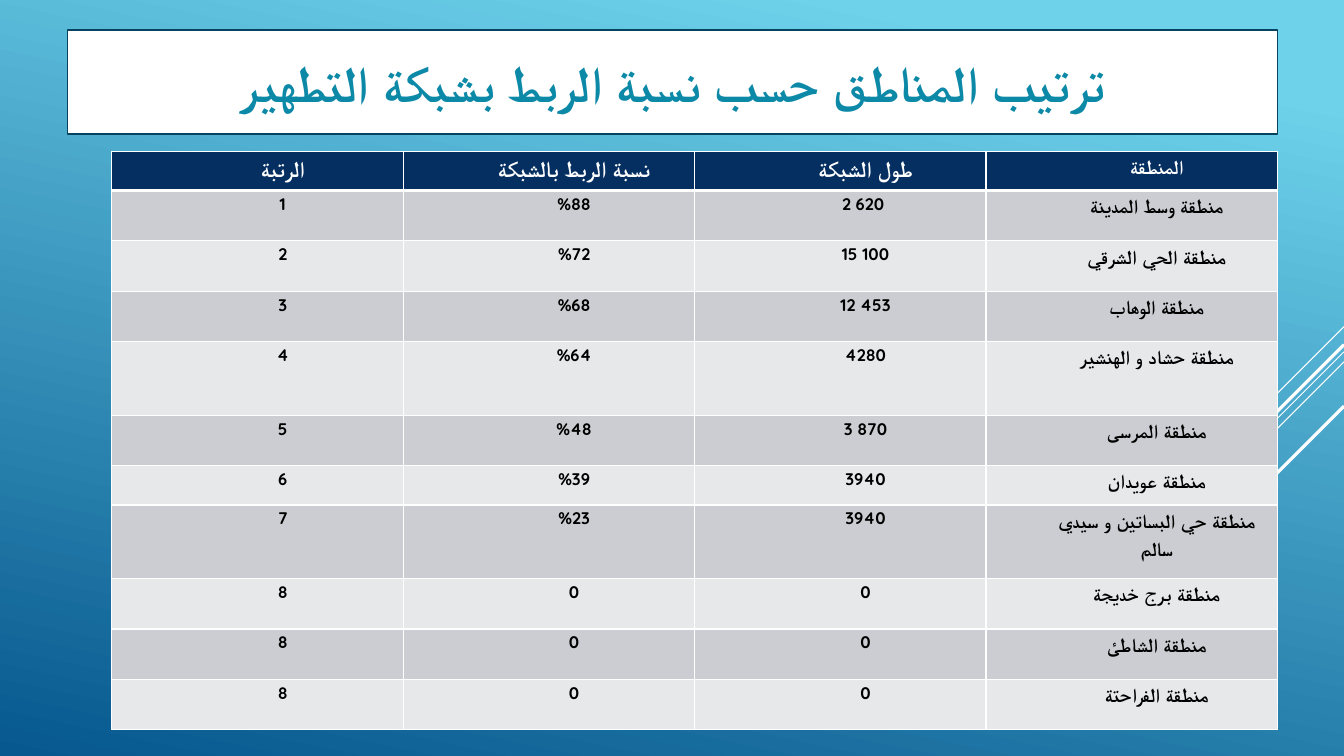
from lxml.etree import SubElement
from pptx import Presentation
from pptx.dml.color import RGBColor
from pptx.enum.shapes import MSO_CONNECTOR as CONNECTOR
from pptx.enum.text import MSO_ANCHOR as ANCHOR, MSO_AUTO_SIZE as AUTO_SIZE, PP_ALIGN as ALIGN
from pptx.oxml import parse_xml
from pptx.oxml.ns import nsdecls, qn
from pptx.util import Inches, Pt

TITLE = "ترتيب المناطق حسب نسبة الربط بشبكة التطهير"
HEADER = ("الرتبة", "نسبة الربط بالشبكة", "طول الشبكة", "المنطقة")
REGIONS = [
    ("1", "%88", "2 620 ", "منطقة وسط المدينة"),
    ("2", "%72", "15 100", "منطقة الحي الشرقي"),
    ("3", "%68", "12 453", "منطقة الوهاب"),
    ("4", "%64", "4280", "منطقة حشاد و الهنشير"),
    ("5", "%48", "3 870", "منطقة المرسى"),
    ("6", "%39", "3940", "منطقة عويدان"),
    ("7", "%23", "3940", "منطقة حي البساتين و سيدي سالم"),
    ("8", "0", "0", "منطقة برج خديجة"),
    ("8", "0", "0", "منطقة الشاطئ"),
    ("8", "0", "0", "منطقة الفراحتة"),
]
ROW_HEIGHT = 0.5
SPECIAL_HEIGHTS = {0: 0.39, 4: 0.73, 6: 0.39, 7: 0.73}
COL_WIDTH = 2.89
DIAGONALS = [(3.24, 1, 0.75), (3.49, 3.26, 0.75), (3.59, 2.07, 0.75),
             (3.42, 1.91, 2.25), (4.03, 1.39, 2.25)]
SLIDE_W, SLIDE_H = 13.33, 7.5

FONT = "Quicksand"
WHITE = RGBColor(0xFF, 0xFF, 0xFF)
BLACK = RGBColor(0x00, 0x00, 0x00)
NAVY = RGBColor(0x05, 0x2F, 0x61)
TEAL = RGBColor(0x0D, 0x89, 0xA8)
TITLE_EDGE = RGBColor(0x05, 0x43, 0x61)
SKY = RGBColor(0x6E, 0xD2, 0xEB)
DEEP_BLUE = RGBColor(0x06, 0x58, 0x8E)
BANDS = (RGBColor(0xE7, 0xE8, 0xEA), RGBColor(0xCC, 0xCD, 0xD2))


def write(p, text, size, color):
    """Put one bold centred run into a paragraph."""
    p.alignment = ALIGN.CENTER
    r = p.add_run()
    r.text = text
    for name, value in {"name": FONT, "size": Pt(size), "bold": True}.items():
        setattr(r.font, name, value)
    r.font.color.rgb = color
    SubElement(r.font._element, qn("a:cs"), typeface=FONT)


def set_background(s):
    """Fill the slide with a slanted blue gradient."""
    fill = s.background.fill
    fill.gradient()
    fill.gradient_angle = 258
    for stop, position, color in zip(fill.gradient_stops, (0.1, 1), (SKY, DEEP_BLUE)):
        stop.position = position
        stop.color.rgb = color


def add_diagonals(s):
    """Draw the 45 degree lines that start at the right edge."""
    for top, run, width in DIAGONALS:
        line = s.shapes.add_connector(
            CONNECTOR.STRAIGHT, Inches(SLIDE_W), Inches(top),
            Inches(SLIDE_W - run), Inches(top + run))
        line.line.color.rgb = WHITE
        line.line.width = Pt(width)
        SubElement(line._element.spPr, qn("a:effectLst"))


def set_borders(cell, row):
    """Give a cell white borders, thicker below the header."""
    thick = {"T": row == 1, "B": row == 0}
    for side in "LRTB":
        width = Pt(3 if thick.get(side) else 1)
        cell._tc.get_or_add_tcPr().append(parse_xml(
            f'<a:ln{side} {nsdecls("a")} w="{width}"><a:solidFill>'
            f'<a:srgbClr val="{WHITE}"/></a:solidFill></a:ln{side}>'))


def add_regions_table(s):
    """Build the ranking table of the regions."""
    rows = [HEADER] + REGIONS
    heights = [SPECIAL_HEIGHTS.get(i, ROW_HEIGHT) for i in range(len(rows))]
    table = s.shapes.add_table(
        len(rows), len(HEADER), Inches(1.11), Inches(1.5),
        Inches(COL_WIDTH * len(HEADER)), Inches(sum(heights))).table
    for col in table.columns:
        col.width = Inches(COL_WIDTH)
    for i, (texts, height) in enumerate(zip(rows, heights)):
        table.rows[i].height = Inches(height)
        for j, text in enumerate(texts):
            cell = table.cell(i, j)
            cell.margin_top = cell.margin_bottom = 0
            set_borders(cell, i)
            cell.fill.solid()
            cell.fill.fore_color.rgb = BANDS[i % 2] if i else NAVY
            p = cell.text_frame.paragraphs[0]
            p.line_spacing = 1.15
            p._p.get_or_add_pPr().set("marL", str(Inches(0.5)))
            size = 14 if j == len(HEADER) - 1 else 12 if i else 16
            write(p, text, size, BLACK if i else WHITE)


def add_title(s):
    """Format the title placeholder as a white framed box."""
    sp = s.shapes.title
    box = {"left": 0.67, "top": 0.3, "width": 12, "height": 1.03}
    for name, value in box.items():
        setattr(sp, name, Inches(value))
    sp.fill.solid()
    sp.fill.fore_color.rgb = WHITE
    sp.line.color.rgb = TITLE_EDGE
    sp.line.width = Pt(1.25)
    tf = sp.text_frame
    tf.word_wrap = True
    tf.auto_size = AUTO_SIZE.NONE
    tf.vertical_anchor = ANCHOR.MIDDLE
    write(tf.paragraphs[0], TITLE, 36, TEAL)


def main():
    """Build and save the slide."""
    prs = Presentation()
    prs.slide_width, prs.slide_height = Inches(SLIDE_W), Inches(SLIDE_H)
    s = prs.slides.add_slide(prs.slide_layouts[5])
    set_background(s)
    add_diagonals(s)
    add_regions_table(s)
    add_title(s)
    prs.save("out.pptx")


if __name__ == "__main__":
    main()
